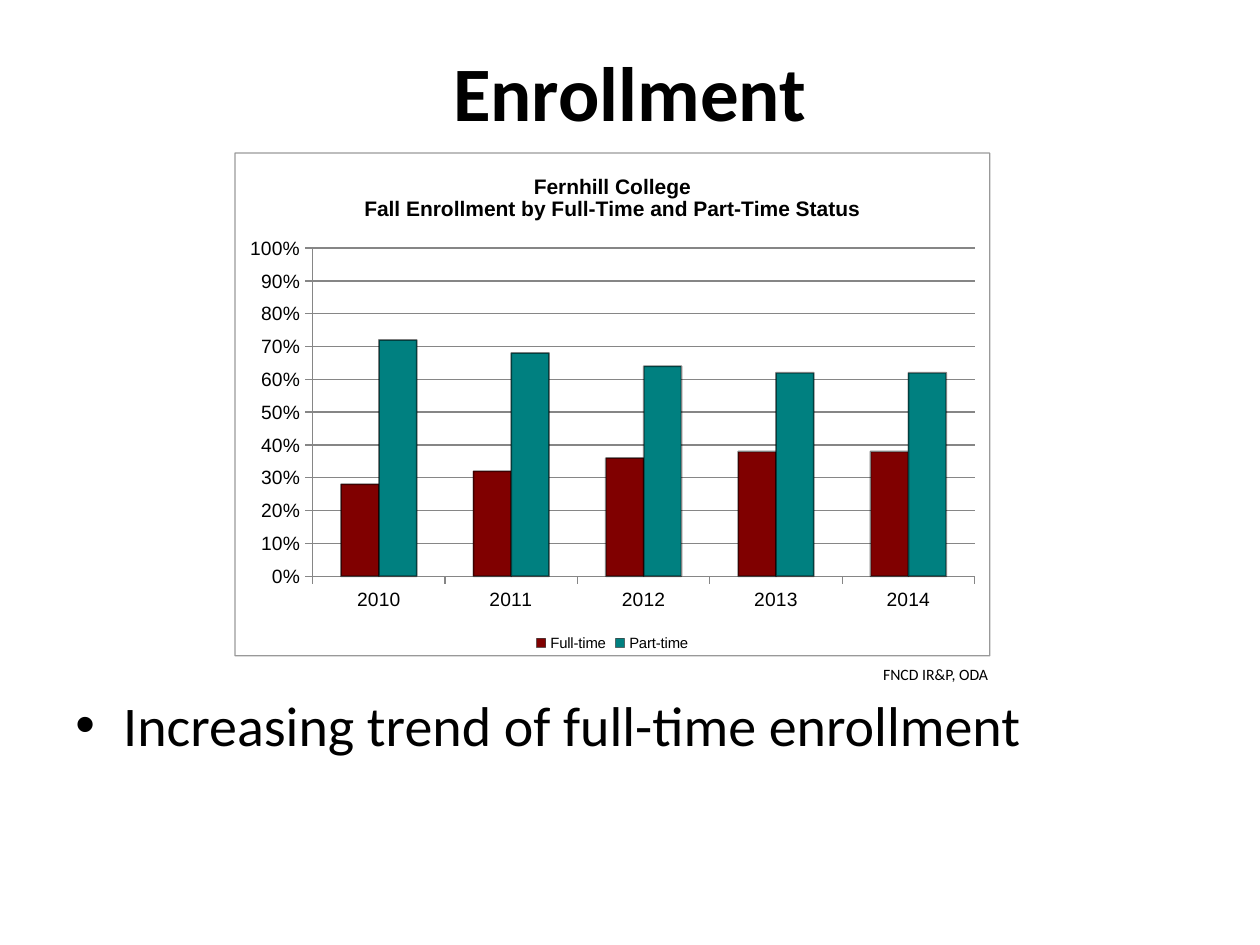
from lxml import etree
from pptx import Presentation
from pptx.chart.data import CategoryChartData
from pptx.dml.color import RGBColor
from pptx.enum.chart import XL_CHART_TYPE, XL_LEGEND_POSITION, XL_TICK_MARK
from pptx.enum.text import MSO_ANCHOR, PP_ALIGN
from pptx.oxml import parse_xml
from pptx.oxml.ns import nsdecls, qn
from pptx.util import Inches, Pt

COLUMN = XL_CHART_TYPE.COLUMN_CLUSTERED
BOTTOM = XL_LEGEND_POSITION.BOTTOM
OUT = XL_TICK_MARK.OUTSIDE
NONE = XL_TICK_MARK.NONE
CENTER, LEFT = PP_ALIGN.CENTER, PP_ALIGN.LEFT
MIDDLE, TOP = MSO_ANCHOR.MIDDLE, MSO_ANCHOR.TOP

COLORS = {"text": "000000", "full": "800000", "part": "008080", "grid": "868686"}
TITLE = "Enrollment"
POINT = "Increasing trend of full-time enrollment"
CREDIT = "FNCD IR&P, ODA"
HEADS = ["Fernhill College", "Fall Enrollment by Full-Time and Part-Time Status"]
YEARS = ["2010", "2011", "2012", "2013", "2014"]
SERIES = [
    ("Full-time", "full", [0.28, 0.32, 0.36, 0.38, 0.38]),
    ("Part-time", "part", [0.72, 0.68, 0.64, 0.62, 0.62]),
]


def shade(name):
    return RGBColor.from_string(COLORS[name])


def style(font, size, face="Calibri", bold=False):
    font.size = Pt(size)
    font.name = face
    font.bold = bold
    font.color.rgb = shade("text")


def write(shape, text, size, align=LEFT, anchor=TOP, bold=False):
    frame = shape.text_frame
    frame.word_wrap = True
    frame.vertical_anchor = anchor
    para = frame.paragraphs[0]
    para.alignment = align
    run = para.add_run()
    run.text = text
    style(run.font, size, bold=bold)
    return para


def outline(line, width, alpha):
    line.color.rgb = shade("text")
    line.width = Pt(width)
    tint = line.fill._xPr.find(".//" + qn("a:srgbClr"))
    etree.SubElement(tint, qn("a:alpha")).set("val", str(alpha * 1000))


def add_box(slide, place):
    return slide.shapes.add_textbox(*map(Inches, place))


def add_title(slide):
    title = slide.shapes.title
    title.left, title.top, title.width, title.height = map(Inches, (0.5, 0.3, 9, 0.84))
    write(title, TITLE, 44, CENTER, MIDDLE, True)


def add_bullet(slide):
    para = write(add_box(slide, (0.5, 5.43, 9, 1.07)), POINT, 32)
    props = para._p.get_or_add_pPr()
    props.set("marL", str(Inches(0.38)))
    props.set("indent", str(Inches(-0.38)))
    etree.SubElement(props, qn("a:buFont")).set("typeface", "Arial")
    etree.SubElement(props, qn("a:buChar")).set("char", "•")


def add_graph(slide):
    data = CategoryChartData(number_format="0%")
    data.categories = YEARS
    for name, _, vals in SERIES:
        data.add_series(name, vals)
    place = map(Inches, (1.86, 1.21, 6, 4))
    chart = slide.shapes.add_chart(COLUMN, *place, data).chart
    style(chart.font, 10)

    frame = chart.chart_title.text_frame
    for i, text in enumerate(HEADS):
        para = frame.add_paragraph() if i else frame.paragraphs[0]
        run = para.add_run()
        run.text = text
        style(run.font, 12, "Arial", True)
    chart.chart_title.include_in_layout = False

    chart.has_legend = True
    chart.legend.position = BOTTOM
    chart.legend.include_in_layout = False
    style(chart.legend.font, 8.5, "Arial")

    plot = chart.plots[0]
    plot.gap_width = 150
    plot.overlap = 0
    plot.vary_by_categories = False
    for bars, (_, color, _) in zip(plot.series, SERIES):
        bars.format.fill.solid()
        bars.format.fill.fore_color.rgb = shade(color)
        outline(bars.format.line, 1, 50)

    value = chart.value_axis
    value.minimum_scale, value.maximum_scale, value.major_unit = 0, 1, 0.1
    value.has_major_gridlines = True
    value.tick_labels.number_format = "0%"
    value.tick_labels.number_format_is_linked = False
    for axis in (chart.category_axis, value):
        axis.major_tick_mark = OUT
        axis.minor_tick_mark = NONE
        style(axis.tick_labels.font, 11, "Arial")
    for part in (chart.category_axis, value, value.major_gridlines):
        part.format.line.color.rgb = shade("grid")
        part.format.line.width = Pt(0.75)

    border = parse_xml(
        f'<c:spPr {nsdecls("c", "a")}><a:noFill/><a:ln w="{Pt(0.75)}"><a:solidFill>'
        f'<a:srgbClr val="{COLORS["text"]}"><a:alpha val="40000"/></a:srgbClr>'
        "</a:solidFill></a:ln></c:spPr>"
    )
    chart._chartSpace.find(qn("c:chart")).addnext(border)


def main():
    deck = Presentation()
    deck.slide_width, deck.slide_height = Inches(10), Inches(7.5)
    slide = deck.slides.add_slide(deck.slide_layouts[5])
    add_bullet(slide)
    add_title(slide)
    add_graph(slide)
    write(add_box(slide, (6.91, 5.23, 1.11, 0.25)), CREDIT, 9)
    deck.save("out.pptx")


if __name__ == "__main__":
    main()
